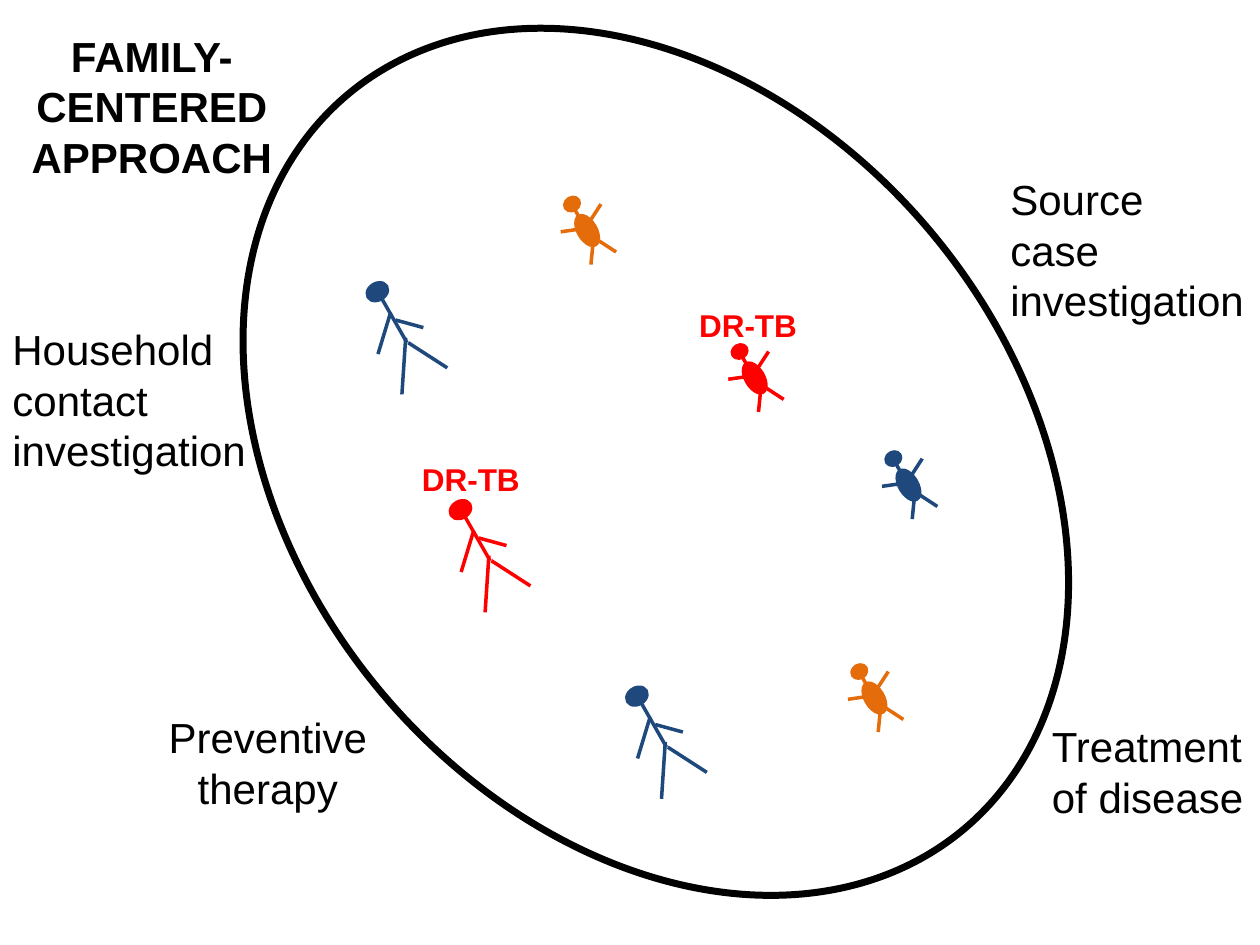
import pptx
import pptx.dml.color
import pptx.enum.shapes
import pptx.enum.text
import pptx.oxml.ns
import pptx.util
import lxml.etree

EMU_PER_PX = 9144  # 100 px to the inch
BLACK, RED, BLUE, ORANGE = "000000", "FF0000", "1F497D", "E46C0A"
TILT = 329.6
LEFT = pptx.enum.text.PP_ALIGN.LEFT
CENTER = pptx.enum.text.PP_ALIGN.CENTER

# Stick figures: positions relative to the head's top left corner
ADULT = {
    "head": (0, 0, 17, 13),
    "limbs": [(12, 12, 32, 47), (31, 43, 28, 88), (33, 47, 64, 67),
              (19, 23, 9, 56), (45, 35, 23, 29)],
}
CHILD = {
    "head": (0, 0, 12, 10),
    "limbs": [(8, 9, 23, 35), (24, 23, 21, 53), (18, 28, 41, 43),
              (18, 24, -3, 27), (29, 5, 16, 25)],
    "belly": (11, 13, 14, 26),
}
FAMILY = [
    (CHILD, 581, 274, RED),
    (ADULT, 291, 225, BLUE),
    (ADULT, 497, 546, BLUE),
    (CHILD, 703, 359, BLUE),
    (ADULT, 357, 398, RED),
    (CHILD, 448, 157, ORANGE),
    (CHILD, 676, 528, ORANGE),
]

# Labels: paragraphs, box, alignment
ACTIVITIES = [
    (["Source", "case", "investigation"], (792, 133, 225, 131), LEFT),
    (["Household", "contact", "investigation"], (0, 252, 225, 131), LEFT),
    (["Preventive therapy"], (100, 560, 225, 91), CENTER),
    (["Treatment of disease"], (825, 567, 192, 91), LEFT),
]
DIAGNOSES = [(545, 238), (325, 360)]


def px(*lengths):
    return [pptx.util.Emu(length * EMU_PER_PX) for length in lengths]


def color(hex_string):
    return pptx.dml.color.RGBColor.from_string(hex_string)


def set_attributes(target, values):
    for name, value in values.items():
        setattr(target, name, value)


def set_line(shape, hex_string, width):
    shape.line.color.rgb = color(hex_string)
    shape.line.width = pptx.util.Pt(width)


def add_ellipse(shapes, box, rotation, line_color, width, filled=True):
    shape = shapes.add_shape(pptx.enum.shapes.MSO_SHAPE.OVAL, *px(*box))
    shape.rotation = rotation
    shape.shadow.inherit = False
    if filled:
        shape.fill.solid()
        shape.fill.fore_color.rgb = color(line_color)
    else:
        shape.fill.background()
    set_line(shape, line_color, width)


def add_limb(shapes, ends, hex_string):
    limb = shapes.add_connector(pptx.enum.shapes.MSO_CONNECTOR.STRAIGHT, *px(*ends))
    set_line(limb, hex_string, 2)
    lxml.etree.SubElement(limb._element.spPr, pptx.oxml.ns.qn("a:effectLst"))


def add_figure(slide, figure, left, top, hex_string):
    shapes = slide.shapes.add_group_shape().shapes

    def add_oval(part):
        x, y, width, height = figure[part]
        add_ellipse(shapes, (left + x, top + y, width, height), TILT, hex_string, 2)

    add_oval("head")
    for x1, y1, x2, y2 in figure["limbs"]:
        add_limb(shapes, (left + x1, top + y1, left + x2, top + y2), hex_string)
    if "belly" in figure:
        add_oval("belly")


def write_text(shape, paragraphs, alignment=LEFT, size=24, hex_string=BLACK, bold=False):
    frame = shape.text_frame
    set_attributes(frame, {
        "text": "\n".join(paragraphs),
        "word_wrap": True,
        "auto_size": pptx.enum.text.MSO_AUTO_SIZE.SHAPE_TO_FIT_TEXT,
        "vertical_anchor": pptx.enum.text.MSO_ANCHOR.TOP,
    })
    for paragraph in frame.paragraphs:
        paragraph.alignment = alignment
        for run in paragraph.runs:
            set_attributes(run.font, {
                "name": "Arial", "size": pptx.util.Pt(size), "bold": bold})
            run.font.color.rgb = color(hex_string)


def add_label(slide, box, paragraphs, **text_format):
    write_text(slide.shapes.add_textbox(*px(*box)), paragraphs, **text_format)


def set_title(slide, box, paragraphs):
    title = slide.shapes.title
    set_attributes(title, dict(zip(("left", "top", "width", "height"), px(*box))))
    write_text(title, paragraphs, alignment=CENTER, bold=True)


def main():
    presentation = pptx.Presentation()
    presentation.slide_width, presentation.slide_height = px(1000, 750)
    slide = presentation.slides.add_slide(presentation.slide_layouts[5])

    # Title
    set_title(slide, (8, 19, 225, 131), ["FAMILY-CENTERED", "APPROACH"])

    # Household and its members
    add_ellipse(slide.shapes, (140, 82, 761, 569), 50, BLACK, 4, filled=False)
    for member in FAMILY:
        add_figure(slide, *member)
    for left, top in DIAGNOSES:
        add_label(slide, (left, top, 124, 40), ["DR-TB"],
                  size=18, hex_string=RED, bold=True)

    # Activities around the household
    for paragraphs, box, alignment in ACTIVITIES:
        add_label(slide, box, paragraphs, alignment=alignment)

    presentation.save("out.pptx")


if __name__ == "__main__":
    main()
